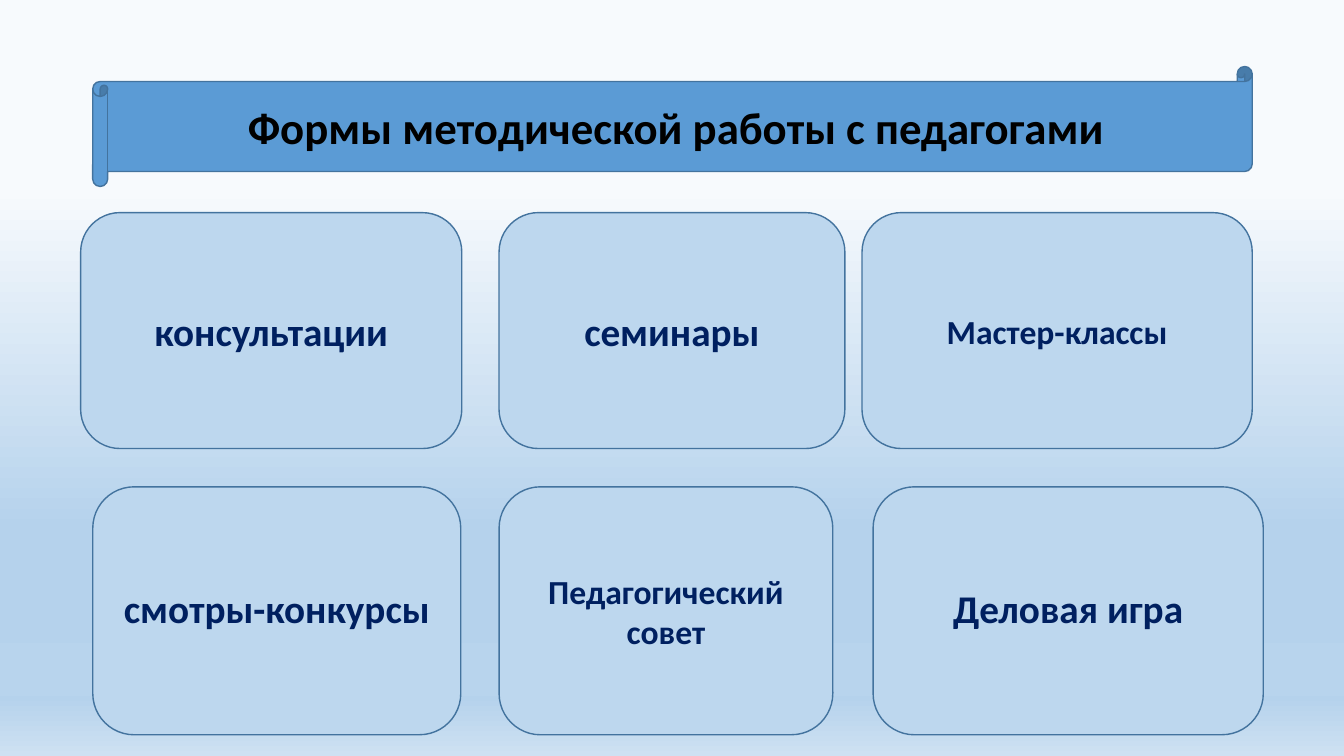
from dataclasses import dataclass, field

from lxml import etree
from pptx import Presentation
from pptx.dml.color import RGBColor
from pptx.enum.shapes import MSO_SHAPE
from pptx.enum.text import MSO_ANCHOR, PP_ALIGN
from pptx.oxml.ns import qn
from pptx.slide import Slide
from pptx.util import Inches, Pt

SCROLL = MSO_SHAPE.HORIZONTAL_SCROLL
ROUND = MSO_SHAPE.ROUNDED_RECTANGLE
MIDDLE = MSO_ANCHOR.MIDDLE
CENTER = PP_ALIGN.CENTER


@dataclass(frozen=True)
class Theme:
    """Colours and type sizes of the slide."""
    font: str = "Calibri"
    banner: str = "5B9BD5"
    card: str = "BDD7EE"
    edge: str = "43739E"
    black: str = "000000"
    navy: str = "002060"
    title: int = 32
    large: int = 28
    small: int = 24
    sky: tuple = ((25, "F7FAFD"), (70, "B5D2EC"), (85, "B8D4ED"),
                  (92, "B5D2EC"), (100, "CEE1F2"))


THEME = Theme()


@dataclass(frozen=True)
class Panel:
    """A filled shape with one centred label."""
    text: str
    left: float
    top: float
    width: float
    height: float
    size: int = THEME.large
    kind: MSO_SHAPE = ROUND
    fill: str = THEME.card
    ink: str = THEME.navy
    para: dict = field(default_factory=dict)


TOP = {"top": 2.11, "height": 2.34}
LOW = {"top": 4.83, "height": 2.46}
BODY = {"line_spacing": 0.9, "space_before": Pt(10)}

PANELS = (
    Panel("Формы методической работы с педагогами", 0.92, 0.66, 11.5, 1.19,
          size=THEME.title, kind=SCROLL, fill=THEME.banner, ink=THEME.black),
    Panel("консультации", left=0.8, width=3.78, **TOP),
    Panel("семинары", left=4.95, width=3.43, **TOP),
    Panel("Мастер-классы", left=8.55, width=3.87, size=THEME.small, **TOP),
    Panel("смотры-конкурсы", left=0.92, width=3.65, para=BODY, **LOW),
    Panel("Педагогический совет", left=4.95, width=3.31, size=THEME.small, **LOW),
    Panel("Деловая игра", left=8.66, width=3.87, para=BODY, **LOW),
)


def style(item: object, values: dict) -> None:
    """Set each named format value on the item."""
    for name, value in values.items():
        setattr(item, name, value)


def paint(slide: Slide) -> None:
    """Fill the background with the vertical sky gradient."""
    fill = slide.background.fill
    fill.gradient()
    fill.gradient_angle = 270
    stops = next(slide.element.iter(qn("a:gsLst")))
    for stop in list(stops):
        stops.remove(stop)
    for place, color in THEME.sky:
        stop = etree.SubElement(stops, qn("a:gs"), pos=str(place * 1000))
        etree.SubElement(stop, qn("a:srgbClr"), val=color)


def draw(slide: Slide, panel: Panel) -> None:
    """Add one panel and its label."""
    box = (panel.left, panel.top, panel.width, panel.height)
    shape = slide.shapes.add_shape(panel.kind, *map(Inches, box))
    shape.shadow.inherit = False
    shape.fill.solid()
    shape.fill.fore_color.rgb = RGBColor.from_string(panel.fill)
    shape.line.color.rgb = RGBColor.from_string(THEME.edge)
    shape.line.width = Pt(1)
    frame = shape.text_frame
    style(frame, {"word_wrap": True, "vertical_anchor": MIDDLE})
    label = frame.paragraphs[0]
    style(label, {"alignment": CENTER, **panel.para})
    run = label.add_run()
    run.text = panel.text
    style(run.font, {"name": THEME.font, "size": Pt(panel.size), "bold": True})
    run.font.color.rgb = RGBColor.from_string(panel.ink)


def main() -> None:
    """Build the slide and save it."""
    deck = Presentation()
    style(deck, {"slide_width": Inches(13.33), "slide_height": Inches(7.5)})
    slide = deck.slides.add_slide(deck.slide_layouts[6])
    paint(slide)
    for panel in PANELS:
        draw(slide, panel)
    deck.save("out.pptx")


if __name__ == "__main__":
    main()
